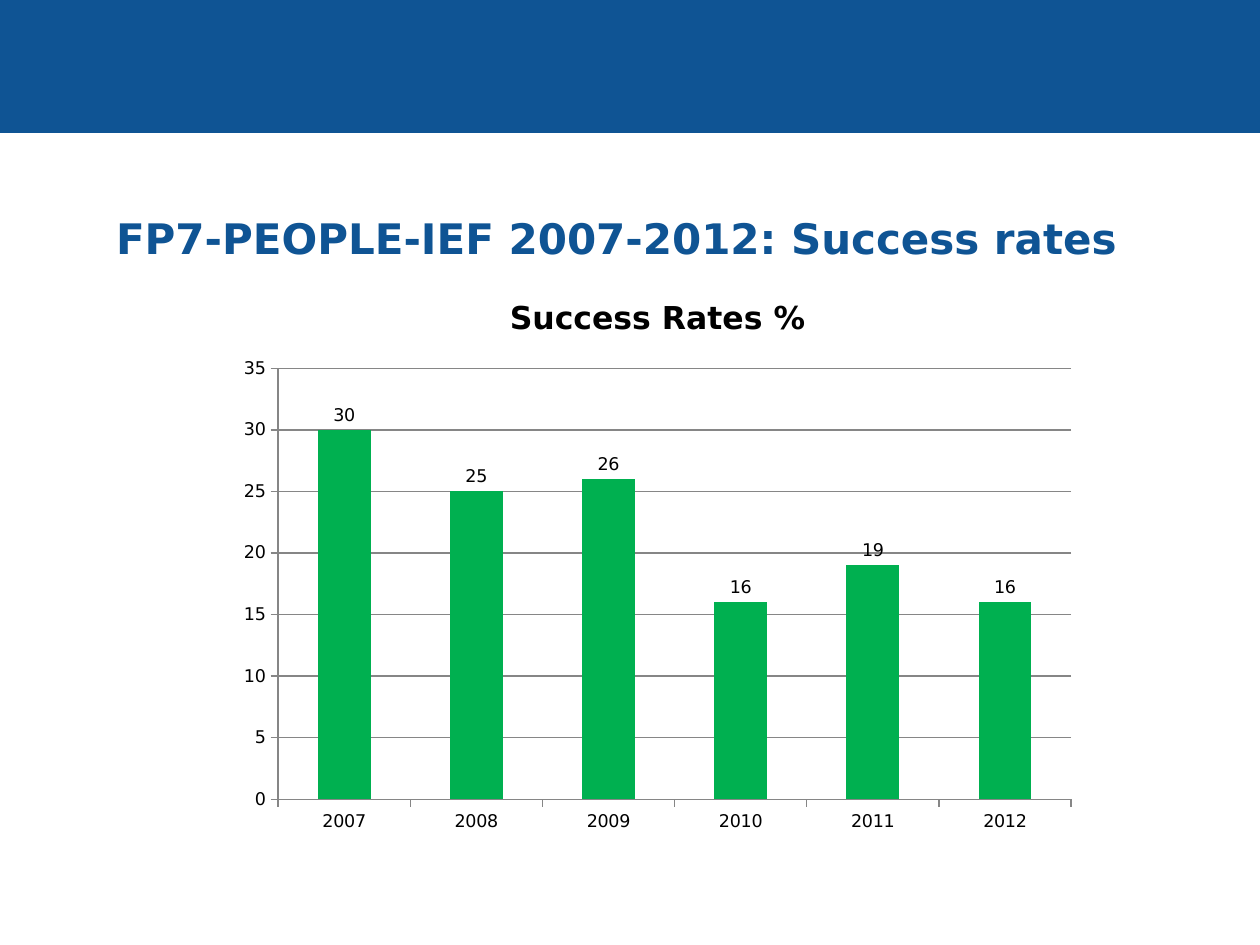
from dataclasses import dataclass

from pptx import Presentation
from pptx.chart.data import CategoryChartData
from pptx.dml.color import RGBColor
from pptx.enum.chart import XL_CHART_TYPE, XL_LABEL_POSITION, XL_TICK_MARK
from pptx.enum.shapes import MSO_SHAPE
from pptx.enum.text import MSO_ANCHOR
from pptx.util import Cm, Pt

RECT = MSO_SHAPE.RECTANGLE
MIDDLE = MSO_ANCHOR.MIDDLE
COLUMN = XL_CHART_TYPE.COLUMN_CLUSTERED
OUTSIDE_END = XL_LABEL_POSITION.OUTSIDE_END
TICK_OUT = XL_TICK_MARK.OUTSIDE


@dataclass(frozen=True)
class Theme:
    font: str = "DejaVu Sans"
    blue: RGBColor = RGBColor(0x0F, 0x54, 0x94)
    green: RGBColor = RGBColor(0x00, 0xB0, 0x50)
    grey: RGBColor = RGBColor(0x86, 0x86, 0x86)
    black: RGBColor = RGBColor(0, 0, 0)
    title: Pt = Pt(24)
    chart_title: Pt = Pt(18)
    label: Pt = Pt(10)
    hairline: Pt = Pt(0.75)


THEME = Theme()
RATES = {"2007": 30, "2008": 25, "2009": 26, "2010": 16, "2011": 19, "2012": 16}


def style_font(font, size, color, bold=False):
    font.name = THEME.font
    font.size = size
    font.bold = bold
    font.color.rgb = color


def write_text(tf, text, size, color, bold=False, indent=0):
    p = tf.paragraphs[0]
    if indent:
        p._p.get_or_add_pPr().set("marL", str(indent))
    r = p.add_run()
    r.text = text
    style_font(r.font, size, color, bold)


def style_line(line, color):
    line.color.rgb = color
    line.width = THEME.hairline


def add_banner(s, x, y, w, h):
    sp = s.shapes.add_shape(RECT, x, y, w, h)
    sp.shadow.inherit = False
    sp.fill.solid()
    sp.fill.fore_color.rgb = THEME.blue
    style_line(sp.line, THEME.blue)


def add_title(s, x, y, w, h, text):
    tf = s.shapes.add_textbox(x, y, w, h).text_frame
    tf.word_wrap = True
    tf.vertical_anchor = MIDDLE
    write_text(tf, text, THEME.title, THEME.blue, bold=True, indent=Cm(1))


def add_rates_chart(s, x, y, w, h, title, rates):
    data = CategoryChartData()
    data.categories = list(rates)
    data.add_series("Series 1", list(rates.values()))
    chart = s.shapes.add_chart(COLUMN, x, y, w, h, data).chart
    style_font(chart.font, THEME.label, THEME.black)
    chart.has_legend = False
    chart.has_title = True
    write_text(chart.chart_title.text_frame, title, THEME.chart_title, THEME.black, bold=True)
    chart.chart_title.include_in_layout = False

    for axis in (chart.category_axis, chart.value_axis):
        axis.major_tick_mark = TICK_OUT
        style_line(axis.format.line, THEME.grey)
    axis = chart.value_axis
    axis.minimum_scale, axis.maximum_scale, axis.major_unit = 0, 35, 5
    axis.has_major_gridlines = True
    style_line(axis.major_gridlines.format.line, THEME.grey)

    plot = chart.plots[0]
    plot.gap_width = 150
    plot.vary_by_categories = False
    series = plot.series[0]
    series.format.fill.solid()
    series.format.fill.fore_color.rgb = THEME.green
    labels = series.data_labels
    labels.show_value = True
    labels.position = OUTSIDE_END
    style_font(labels.font, THEME.label, THEME.black)


def main():
    prs = Presentation()
    prs.slide_width, prs.slide_height = Cm(25.4), Cm(19.05)
    s = prs.slides.add_slide(prs.slide_layouts[6])
    add_banner(s, 0, 0, prs.slide_width, Cm(2.67))
    add_title(s, Cm(1.09), Cm(3.5), Cm(22.94), Cm(2.6),
              "FP7-PEOPLE-IEF 2007-2012: Success rates")
    add_rates_chart(s, Cm(4.57), Cm(5.51), Cm(17.37), Cm(11.48),
                    "Success Rates %", RATES)
    prs.save("out.pptx")


if __name__ == "__main__":
    main()
